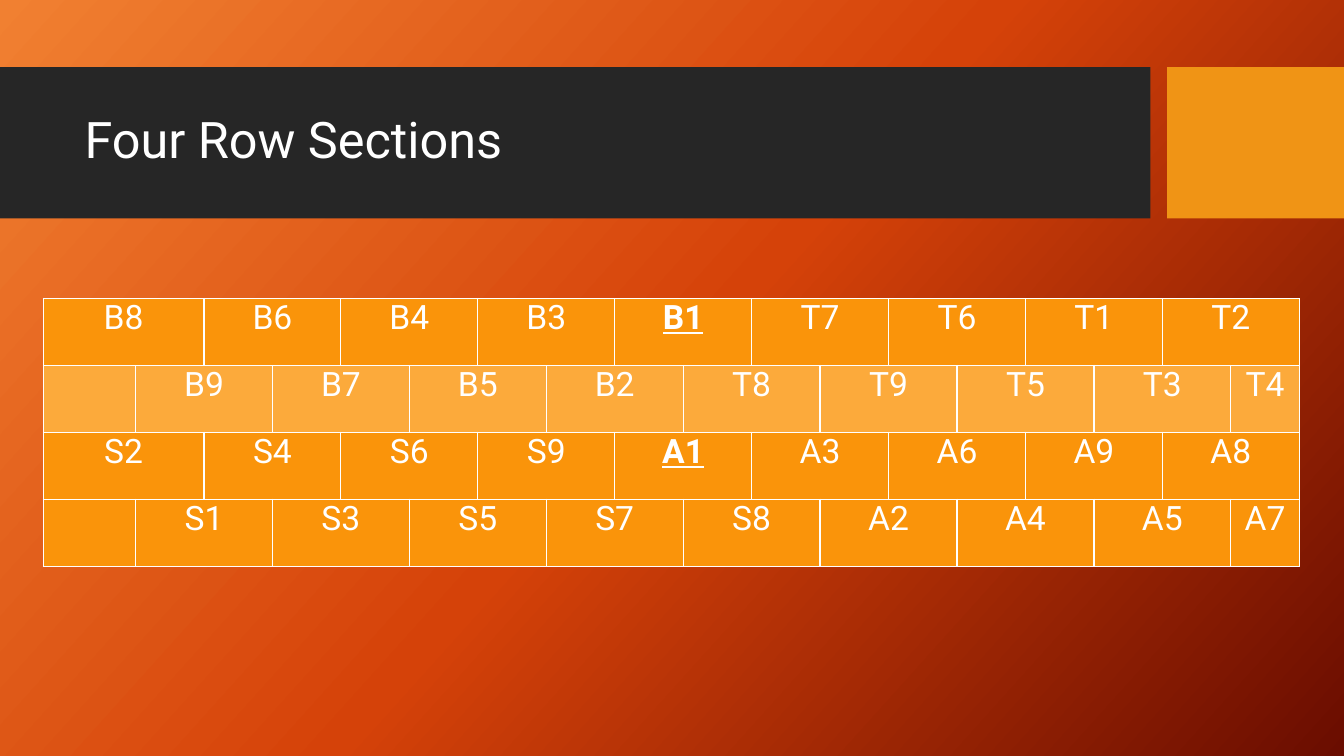
from copy import deepcopy
from dataclasses import dataclass

from lxml.etree import SubElement
from pptx import Presentation
from pptx.dml.color import RGBColor
from pptx.enum.shapes import MSO_SHAPE
from pptx.enum.text import MSO_ANCHOR, PP_ALIGN
from pptx.oxml.ns import qn
from pptx.util import Pt


@dataclass(frozen=True)
class Theme:
    font: str = "Roboto"
    title: int = 36
    seat: int = 24
    white: str = "FFFFFF"
    dark: str = "262626"
    amber: str = "F09415"
    plain: str = "FA940A"
    light: str = "FCAA3B"
    glow: tuple = ("F18031", "D54209", "6A0D00")


theme = Theme()


def style(para, size):
    para.font.name = theme.font
    para.font.size = Pt(size)
    para.font.color.rgb = RGBColor.from_string(theme.white)


def edge(cell):
    """Draw a thin white line on all four sides of a cell."""
    props = cell._tc.get_or_add_tcPr()
    for spot, side in enumerate(("lnL", "lnR", "lnT", "lnB")):
        line = SubElement(props, qn(f"a:{side}"), w=str(Pt(1)))
        fill = SubElement(line, qn("a:solidFill"))
        SubElement(fill, qn("a:srgbClr"), val=theme.white)
        props.insert(spot, line)


deck = Presentation()
deck.slide_width, deck.slide_height = Pt(960), Pt(540)
slide = deck.slides.add_slide(deck.slide_layouts[6])

# Background gradient
back = slide.background.fill
back.gradient()
back.gradient_angle = 318
stops = slide.element.find(f".//{qn('a:gsLst')}")
stops.append(deepcopy(stops[-1]))
for stop, color, place in zip(back.gradient_stops, theme.glow, (0, 0.5, 1)):
    stop.color.rgb = RGBColor.from_string(color)
    stop.position = place

# Title band
for left, width, color in ((0, 821.8, theme.dark), (833.6, 126.4, theme.amber)):
    band = slide.shapes.add_shape(
        MSO_SHAPE.RECTANGLE, Pt(left), Pt(48), Pt(width), Pt(108))
    band.shadow.inherit = False
    band.fill.solid()
    band.fill.fore_color.rgb = RGBColor.from_string(color)
    band.line.fill.background()

title = slide.shapes.add_textbox(Pt(53.3), Pt(59), Pt(756.7), Pt(85)).text_frame
title.word_wrap = True
title.vertical_anchor = MSO_ANCHOR.MIDDLE
head = title.paragraphs[0]
head.text = "Four Row Sections"
head.line_spacing = 0.9
style(head, theme.title)

# Seats: each spans two columns, and every second row is shifted by one
rows = (
    (0, theme.plain, "B8 B6 B4 B3 B1 T7 T6 T1 T2"),
    (1, theme.light, "B9 B7 B5 B2 T8 T9 T5 T3 T4"),
    (0, theme.plain, "S2 S4 S6 S9 A1 A3 A6 A9 A8"),
    (1, theme.plain, "S1 S3 S5 S7 S8 A2 A4 A5 A7"),
)
leads = ("B1", "A1")
count = 18
first, rest, high = 66, 48.9, 47.8

grid = slide.shapes.add_table(
    len(rows), count, Pt(30.8), Pt(213.2),
    Pt(first + rest * (count - 1)), Pt(high * len(rows))).table
grid.first_row = grid.horz_banding = False
for col, column in enumerate(grid.columns):
    column.width = Pt(rest if col else first)

for row, (shift, color, names) in enumerate(rows):
    grid.rows[row].height = Pt(high)
    for col in range(count):
        cell = grid.cell(row, col)
        cell.margin_left = cell.margin_right = Pt(5)
        cell.margin_top = cell.margin_bottom = 0
        cell.fill.solid()
        cell.fill.fore_color.rgb = RGBColor.from_string(color)
        edge(cell)
    for spot, name in enumerate(names.split()):
        col = shift + 2 * spot
        cell = grid.cell(row, col)
        if col + 1 < count:
            cell.merge(grid.cell(row, col + 1))
        cell.text = name
        para = cell.text_frame.paragraphs[0]
        para.alignment = PP_ALIGN.CENTER
        style(para, theme.seat)
        if name in leads:
            para.font.bold = para.font.underline = True

deck.save("out.pptx")
